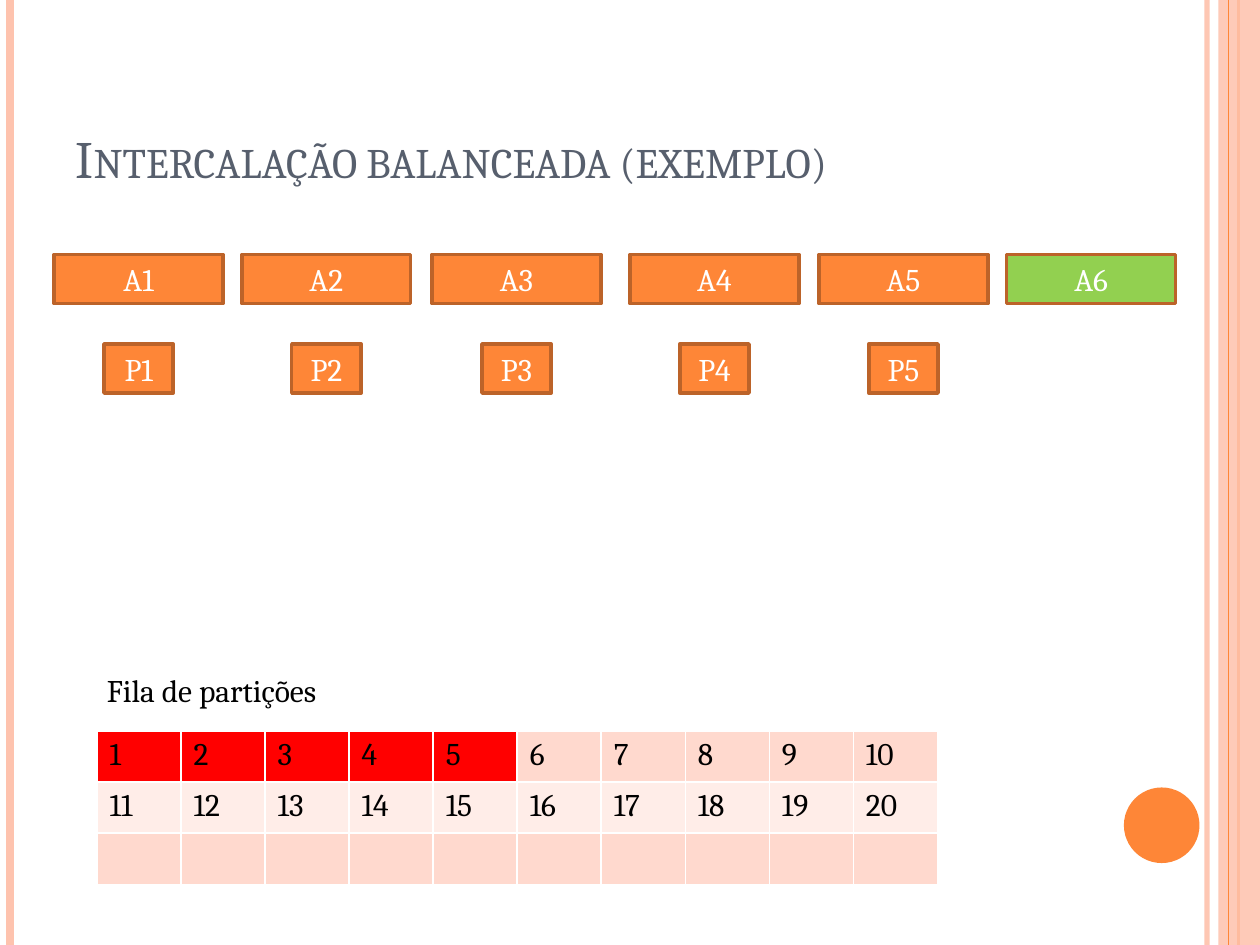
from dataclasses import dataclass
from typing import Any

from lxml import etree
from pptx import Presentation
from pptx.dml.color import RGBColor
from pptx.enum.shapes import MSO_CONNECTOR, MSO_SHAPE
from pptx.enum.text import MSO_ANCHOR, MSO_AUTO_SIZE, PP_ALIGN
from pptx.oxml.ns import qn
from pptx.util import Inches, Pt

LINE = MSO_CONNECTOR.STRAIGHT
RECT, OVAL = MSO_SHAPE.RECTANGLE, MSO_SHAPE.OVAL
LEFT, CENTER = PP_ALIGN.LEFT, PP_ALIGN.CENTER
MIDDLE, BOTTOM = MSO_ANCHOR.MIDDLE, MSO_ANCHOR.BOTTOM

ORANGE = RGBColor(0xFE, 0x86, 0x37)
BROWN = RGBColor(0xBC, 0x63, 0x29)
PEACH = RGBColor(0xFE, 0xC3, 0xAE)
GREEN = RGBColor(0x92, 0xD0, 0x50)
RED = RGBColor(0xFF, 0x00, 0x00)
SLATE = RGBColor(0x57, 0x5F, 0x6D)
BLACK = RGBColor(0x00, 0x00, 0x00)
WHITE = RGBColor(0xFF, 0xFF, 0xFF)
BANDS = (RGBColor(0xFF, 0xD9, 0xCE), RGBColor(0xFF, 0xED, 0xE8))

FONT = "Cambria"
TALL = 7.5
FILE_W, PART_W, BOX_H = 1.34, 0.55, 0.39
FILE_TOP, PART_TOP = 2.02, 2.73
FILE_LEFTS = (0.43, 1.92, 3.43, 5, 6.5, 7.99)
ROWS, COLS, LAST, DONE = 3, 10, 20, 5


@dataclass
class Rule:
    x: float
    color: RGBColor
    width: float
    alpha: int = 100


@dataclass
class Box:
    text: str
    x: float
    y: float
    w: float
    fill: RGBColor = ORANGE


RULES = (
    Rule(9.58, PEACH, 3, 93),
    Rule(0.08, PEACH, 4.5),
    Rule(9.83, ORANGE, 1.5),
    Rule(9.75, ORANGE, 0.75),
)


def fade(shape: Any, alpha: int) -> None:
    """Make the first colour of the shape see-through."""
    color = next(shape._element.spPr.iter(qn("a:srgbClr")))
    etree.SubElement(color, qn("a:alpha")).set("val", str(alpha * 1000))


def write(frame: Any, text: str, color: RGBColor, size: float = 18,
          align: Any = LEFT) -> Any:
    par = frame.paragraphs[0]
    par.alignment = align
    run = par.add_run()
    run.text = text
    run.font.color.rgb = color
    for key, val in {"name": FONT, "size": Pt(size), "bold": False}.items():
        setattr(run.font, key, val)
    return run


def add_rule(slide: Any, rule: Rule) -> None:
    x = Inches(rule.x)
    line = slide.shapes.add_connector(LINE, x, 0, x, Inches(TALL))
    line.line.color.rgb = rule.color
    line.line.width = Pt(rule.width)
    if rule.alpha < 100:
        fade(line, rule.alpha)
    etree.SubElement(line._element.spPr, qn("a:effectLst"))


def add_plain(slide: Any, kind: Any, x: float, y: float, w: float, h: float,
              fill: RGBColor) -> Any:
    shape = slide.shapes.add_shape(
        kind, Inches(x), Inches(y), Inches(w), Inches(h))
    shape.shadow.inherit = False
    shape.fill.solid()
    shape.fill.fore_color.rgb = fill
    shape.line.fill.background()
    return shape


def add_box(slide: Any, box: Box) -> None:
    shape = add_plain(slide, RECT, box.x, box.y, box.w, BOX_H, box.fill)
    shape.line.color.rgb = BROWN
    shape.line.width = Pt(2)
    shape.text_frame.vertical_anchor = MIDDLE
    write(shape.text_frame, box.text, WHITE, align=CENTER)


def edge(cell: Any) -> None:
    """Draw thin white borders on all sides of the cell."""
    props = cell._tc.get_or_add_tcPr()
    for side in "LRTB":
        line = etree.SubElement(props, qn(f"a:ln{side}"), w=str(Pt(1)))
        fill = etree.SubElement(line, qn("a:solidFill"))
        etree.SubElement(fill, qn("a:srgbClr"), val=str(WHITE))


def add_queue(slide: Any) -> None:
    table = slide.shapes.add_table(
        ROWS, COLS, Inches(0.77), Inches(5.8), Inches(6.67), Inches(1.22)).table
    table.first_row = False
    for i in range(ROWS * COLS):
        row, col = divmod(i, COLS)
        cell = table.cell(row, col)
        edge(cell)
        cell.fill.solid()
        cell.fill.fore_color.rgb = RED if i < DONE else BANDS[row % 2]
        if i < LAST:
            write(cell.text_frame, str(i + 1), BLACK)


def add_title(slide: Any) -> None:
    title = slide.shapes.title
    place = {"left": 0.5, "top": 0.3, "width": 8.17, "height": 1.25}
    for key, val in place.items():
        setattr(title, key, Inches(val))
    frame = title.text_frame
    form = {"vertical_anchor": BOTTOM, "word_wrap": True,
            "auto_size": MSO_AUTO_SIZE.NONE}
    for key, val in form.items():
        setattr(frame, key, val)
    run = write(frame, "Intercalação balanceada (exemplo)", SLATE, 30)
    run._r.get_or_add_rPr().set("cap", "small")


def add_label(slide: Any) -> None:
    label = slide.shapes.add_textbox(
        Inches(0.75), Inches(5.28), Inches(2.14), Inches(0.4))
    label.text_frame.word_wrap = False
    label.text_frame.auto_size = MSO_AUTO_SIZE.SHAPE_TO_FIT_TEXT
    write(label.text_frame, "Fila de partições", BLACK)


def main() -> None:
    deck = Presentation()
    deck.slide_width, deck.slide_height = Inches(10), Inches(TALL)
    slide = deck.slides.add_slide(deck.slide_layouts[5])

    for rule in RULES[:3]:
        add_rule(slide, rule)
    fade(add_plain(slide, RECT, 9.67, 0, 0.33, TALL, PEACH), 87)
    add_rule(slide, RULES[3])
    add_plain(slide, OVAL, 8.92, 6.25, 0.6, 0.6, ORANGE)
    add_title(slide)

    final = len(FILE_LEFTS)
    for num, x in enumerate(FILE_LEFTS, 1):
        fill = GREEN if num == final else ORANGE
        add_box(slide, Box(f"A{num}", x, FILE_TOP, FILE_W, fill))
        if num < final:
            mid = x + (FILE_W - PART_W) / 2
            add_box(slide, Box(f"P{num}", mid, PART_TOP, PART_W))
    add_queue(slide)
    add_label(slide)
    deck.save("out.pptx")


if __name__ == "__main__":
    main()
